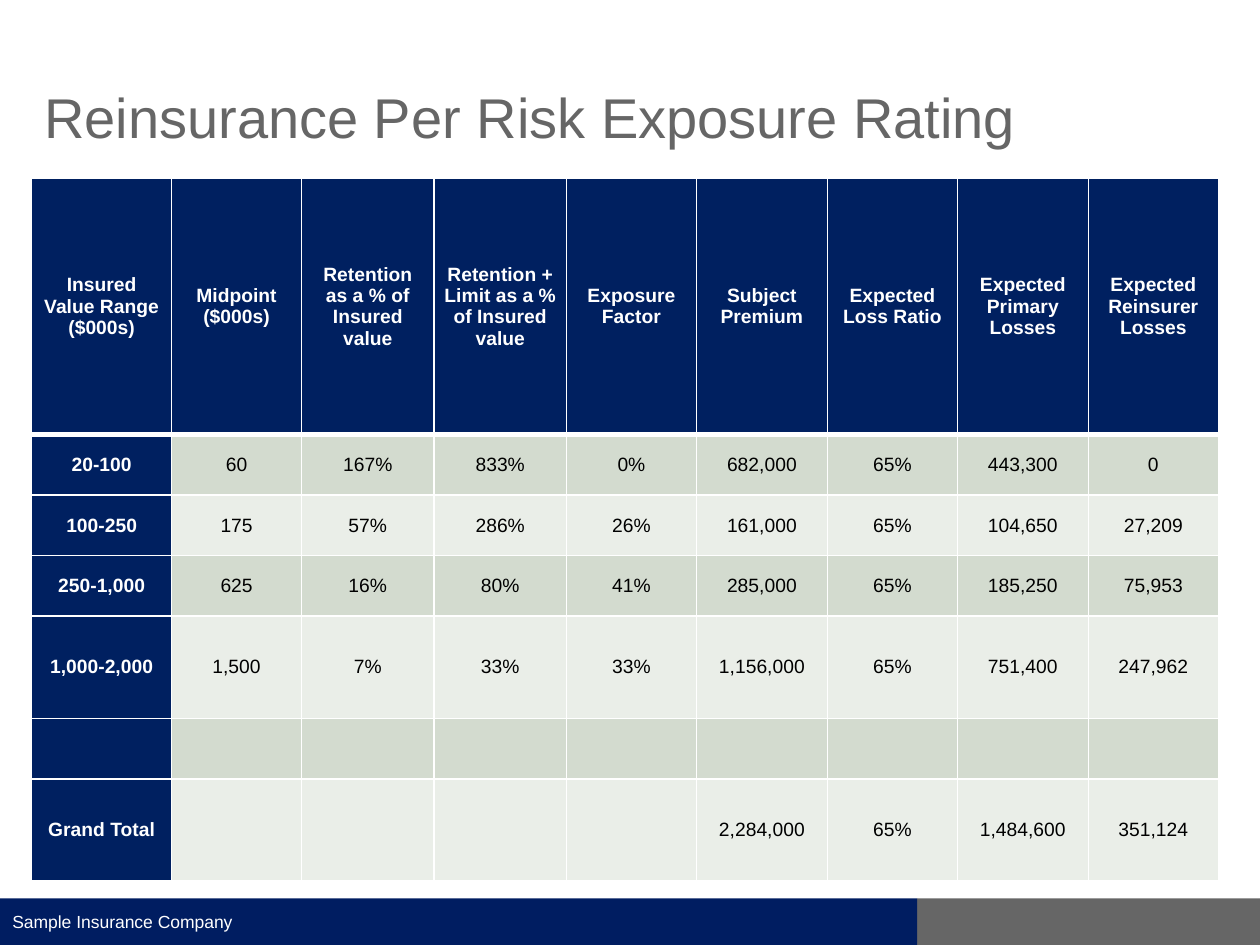
from dataclasses import dataclass

import lxml.etree
import pptx
import pptx.dml.color
import pptx.enum.shapes
import pptx.enum.text
import pptx.oxml.ns
import pptx.util

Cm = pptx.util.Cm
Pt = pptx.util.Pt


@dataclass(frozen=True)
class Theme:
    """Colours, font and type sizes of the slide."""
    font: str = "Arial"
    white: str = "FFFFFF"
    black: str = "000000"
    grey: str = "666666"
    footer_navy: str = "001D61"
    table_navy: str = "002060"
    bands: tuple = ("D3DBCF", "EAEEE8")
    title_size: int = 32
    table_size: int = 11
    footer_size: int = 10
    rule: int = 1
    header_rule: int = 3


THEME = Theme()

COLUMN_WIDTHS = (2.82, 2.62, 2.67, 2.67, 2.62, 2.64, 2.62, 2.64, 2.62)
ROW_HEIGHTS = (5.16, 1.22, 1.22, 1.22, 2.06, 1.22, 2.06)
RATING_ROWS = (
    ("Insured Value Range ($000s)", "Midpoint ($000s)",
     "Retention as a % of Insured value",
     "Retention + Limit as a % of Insured value", "Exposure Factor",
     "Subject Premium", "Expected Loss Ratio", "Expected Primary Losses",
     "Expected Reinsurer Losses"),
    ("20-100", "60", "167%", "833%", "0%", "682,000", "65%", "443,300", "0"),
    ("100-250", "175", "57%", "286%", "26%", "161,000", "65%", "104,650", "27,209"),
    ("250-1,000", "625", "16%", "80%", "41%", "285,000", "65%", "185,250", "75,953"),
    ("1,000-2,000", "1,500", "7%", "33%", "33%", "1,156,000", "65%", "751,400", "247,962"),
    ("",) * 9,
    ("Grand Total", "", "", "", "", "2,284,000", "65%", "1,484,600", "351,124"),
)


def rgb(colour):
    """Return the colour object for a hex string."""
    return pptx.dml.color.RGBColor.from_string(colour)


def style_paragraph(paragraph, size, colour, bold=False):
    """Set the font of a whole paragraph."""
    font = paragraph.font
    font.name, font.size, font.bold = THEME.font, Pt(size), bold
    font.color.rgb = rgb(colour)


def add_label(slide, text, left, top, width, height, size, colour):
    """Add a vertically centred text box of one paragraph."""
    frame = slide.shapes.add_textbox(Cm(left), Cm(top), Cm(width), Cm(height)).text_frame
    frame.word_wrap = True
    frame.vertical_anchor = pptx.enum.text.MSO_ANCHOR.MIDDLE
    frame.margin_top = frame.margin_bottom = 0
    frame.text = text
    style_paragraph(frame.paragraphs[0], size, colour)


def add_band(slide, left, top, width, height, colour):
    """Add a plain filled rectangle."""
    band = slide.shapes.add_shape(
        pptx.enum.shapes.MSO_SHAPE.RECTANGLE, Cm(left), Cm(top), Cm(width), Cm(height))
    band.shadow.inherit = False
    band.fill.solid()
    band.fill.fore_color.rgb = rgb(colour)
    band.line.fill.background()


def add_footer(slide, left, top, width, height):
    """Draw the two-colour footer with the company name."""
    navy_width = 18.49
    add_band(slide, left + navy_width, top, width - navy_width, height, THEME.grey)
    add_band(slide, left, top, navy_width, height, THEME.footer_navy)
    add_label(slide, "Sample Insurance Company", left, top, 5.4, height,
              THEME.footer_size, THEME.white)


def rule_cell(cell, top, bottom):
    """Draw white rules on the four sides of a cell."""
    properties = cell._tc.get_or_add_tcPr()
    sides = {"lnL": THEME.rule, "lnR": THEME.rule, "lnT": top, "lnB": bottom}
    for side, weight in sides.items():
        line = lxml.etree.SubElement(
            properties, pptx.oxml.ns.qn(f"a:{side}"), w=str(Pt(weight)))
        fill = lxml.etree.SubElement(line, pptx.oxml.ns.qn("a:solidFill"))
        lxml.etree.SubElement(fill, pptx.oxml.ns.qn("a:srgbClr"), val=THEME.white)


def fill_cell(cell, text, row, column):
    """Write and format one cell by its place in the table."""
    heading = row == 0 or column == 0
    rule_cell(cell,
              THEME.header_rule if row == 1 else THEME.rule,
              THEME.header_rule if row == 0 else THEME.rule)
    cell.fill.solid()
    cell.fill.fore_color.rgb = rgb(
        THEME.table_navy if heading else THEME.bands[(row - 1) % 2])
    cell.vertical_anchor = pptx.enum.text.MSO_ANCHOR.MIDDLE
    cell.margin_left = cell.margin_right = Cm(0.18)
    cell.margin_top = cell.margin_bottom = 0
    cell.text = text
    paragraph = cell.text_frame.paragraphs[0]
    paragraph.alignment = pptx.enum.text.PP_ALIGN.CENTER
    style_paragraph(paragraph, THEME.table_size,
                    THEME.white if heading else THEME.black, heading)


def add_rating_table(slide, left, top):
    """Draw the exposure rating table from its top left corner."""
    rating = slide.shapes.add_table(
        len(ROW_HEIGHTS), len(COLUMN_WIDTHS), Cm(left), Cm(top),
        Cm(sum(COLUMN_WIDTHS)), Cm(sum(ROW_HEIGHTS))).table
    rating.first_col = True
    for column, width in zip(rating.columns, COLUMN_WIDTHS):
        column.width = Cm(width)
    for row, height in zip(rating.rows, ROW_HEIGHTS):
        row.height = Cm(height)
    for row, texts in enumerate(RATING_ROWS):
        for column, text in enumerate(texts):
            fill_cell(rating.cell(row, column), text, row, column)


def main():
    """Build the slide and save it."""
    deck = pptx.Presentation()
    deck.slide_width, deck.slide_height = Cm(25.4), Cm(19.05)
    slide = deck.slides.add_slide(deck.slide_layouts[6])
    add_footer(slide, 0, 18.11, 25.4, 0.94)
    add_label(slide, "Reinsurance Per Risk Exposure Rating",
              0.64, 0.76, 24.13, 3.18, THEME.title_size, THEME.grey)
    add_rating_table(slide, 0.64, 3.6)
    deck.save("out.pptx")


if __name__ == "__main__":
    main()
